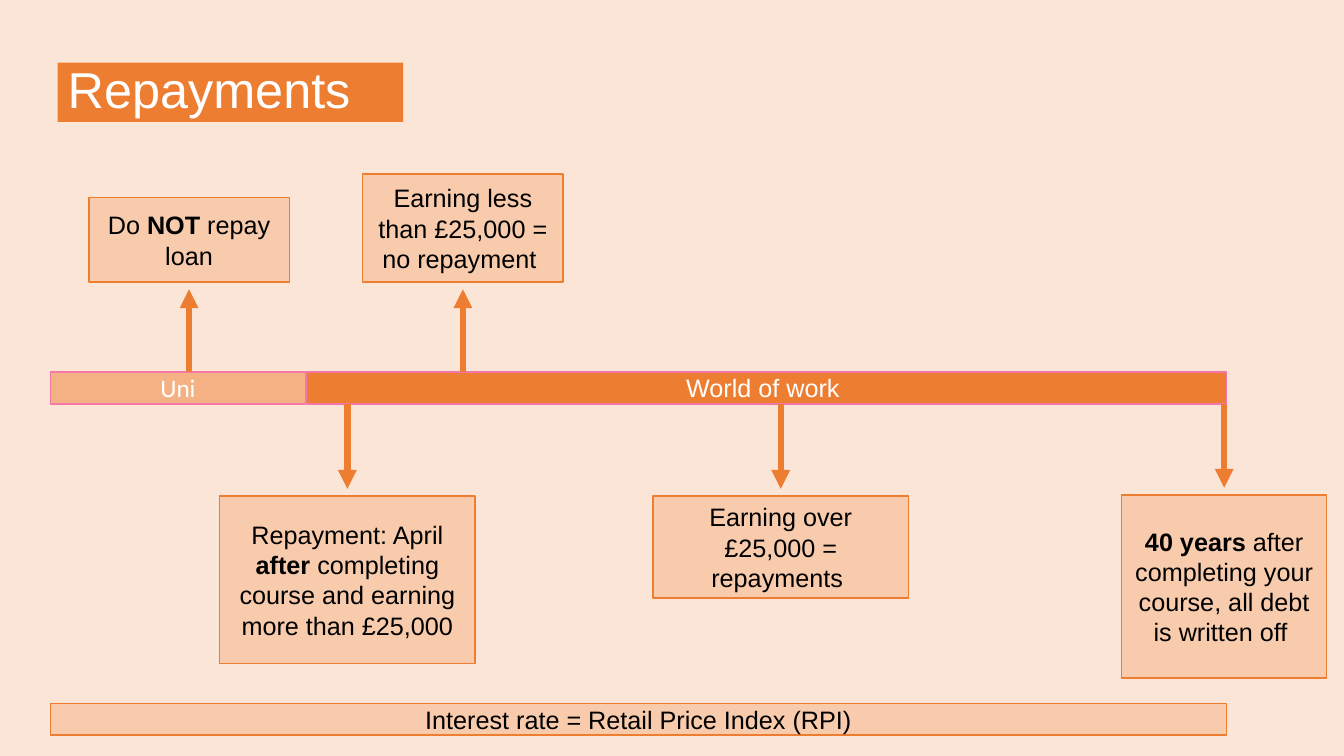
from lxml.etree import SubElement
from pptx import Presentation
from pptx.dml.color import RGBColor
from pptx.enum.shapes import MSO_CONNECTOR, MSO_SHAPE
from pptx.enum.text import MSO_ANCHOR, MSO_AUTO_SIZE, PP_ALIGN
from pptx.oxml.ns import qn
from pptx.util import Cm, Pt

ORANGE, PEACH, PINK = "ED7D31", "F8CBAD", "F577AA"
WHITE, BLACK = "FFFFFF", "000000"

# Content: runs are (text, bold); positions are left, top, width, height in cm
TITLE = "Repayments"
TITLE_AREA = (1.45, 1.58, 8.71, 1.49)
BAR_TOP, BAR_HEIGHT = 9.37, 0.81
STAGES = [  # text, left, width, fill, font
    ("World of work ", 7.72, 23.19, ORANGE, "Arial"),
    ("Uni", 1.27, 6.43, "F4B183", "Calibri"),
]
NOTES = [
    ([("Do ", False), ("NOT", True), (" repay loan", False)],
     (2.24, 4.98, 5.05, 2.13)),
    ([("Earning less than £25,000 = no repayment ", False)],
     (9.14, 4.39, 5.05, 2.72)),
    ([("Repayment: April ", False), ("after ", True),
      ("completing course and earning more than £25,000", False)],
     (5.54, 12.5, 6.43, 4.22)),
    ([("Earning over £25,000 = repayments ", False)],
     (16.46, 12.5, 6.43, 2.57)),
    ([("40 years ", True),
      ("after completing your course, all debt is written off ", False)],
     (28.27, 12.47, 5.16, 4.62)),
]
INTEREST = ([("Interest rate = Retail Price Index (RPI)", False)],
            (1.27, 17.73, 29.64, 0.79))
ARROW_GAP = 0.18


def color(value):
    return RGBColor.from_string(value)


def fill_shape(shape, value):
    shape.fill.solid()
    shape.fill.fore_color.rgb = color(value)


def add_run(paragraph, text, size, value, font="Arial", bold=False):
    run = paragraph.add_run()
    run.text = text
    run.font.size = Pt(size)
    run.font.name = font
    run.font.bold = bold
    run.font.color.rgb = color(value)


def add_box(slide, runs, area, fill=PEACH, line=ORANGE, text_color=BLACK, font="Arial"):
    shape = slide.shapes.add_shape(MSO_SHAPE.RECTANGLE, *map(Cm, area))
    shape.shadow.inherit = False
    fill_shape(shape, fill)
    shape.line.color.rgb = color(line)
    shape.line.width = Pt(1)
    frame = shape.text_frame
    frame.word_wrap = True
    frame.vertical_anchor = MSO_ANCHOR.MIDDLE
    paragraph = frame.paragraphs[0]
    paragraph.alignment = PP_ALIGN.CENTER
    for text, bold in runs:
        add_run(paragraph, text, 18, text_color, font, bold)


def add_arrow(slide, x, start, end):
    arrow = slide.shapes.add_connector(
        MSO_CONNECTOR.STRAIGHT, Cm(x), Cm(start), Cm(x), Cm(end))
    arrow.line.color.rgb = color(ORANGE)
    arrow.line.width = Pt(4.5)
    SubElement(arrow.line._get_or_add_ln(), qn("a:tailEnd"), type="triangle")
    SubElement(arrow._element.spPr, qn("a:effectLst"))


def main():
    presentation = Presentation()
    presentation.slide_width, presentation.slide_height = Cm(33.87), Cm(19.05)
    slide = presentation.slides.add_slide(presentation.slide_layouts[5])
    fill_shape(slide.background, "FBE5D6")

    # Title
    title = slide.shapes.title
    title.left, title.top, title.width, title.height = map(Cm, TITLE_AREA)
    fill_shape(title, ORANGE)
    frame = title.text_frame
    frame.auto_size = MSO_AUTO_SIZE.NONE
    frame.vertical_anchor = MSO_ANCHOR.MIDDLE
    paragraph = frame.paragraphs[0]
    paragraph.alignment = PP_ALIGN.LEFT
    paragraph.line_spacing = 0.9
    add_run(paragraph, TITLE, 36, WHITE)

    # Timeline bar
    for text, left, width, fill, font in STAGES:
        add_box(slide, [(text, False)], (left, BAR_TOP, width, BAR_HEIGHT),
                fill, PINK, WHITE, font)

    # Notes, each with an arrow from the bar towards its middle
    for runs, area in NOTES:
        left, top, width, height = area
        if top < BAR_TOP:
            start, end = BAR_TOP, top + height + ARROW_GAP
        else:
            start, end = BAR_TOP + BAR_HEIGHT, top - ARROW_GAP
        add_arrow(slide, left + width / 2, start, end)
        add_box(slide, runs, area)

    # Interest rate strip
    add_box(slide, *INTEREST)

    presentation.save("out.pptx")


if __name__ == "__main__":
    main()
